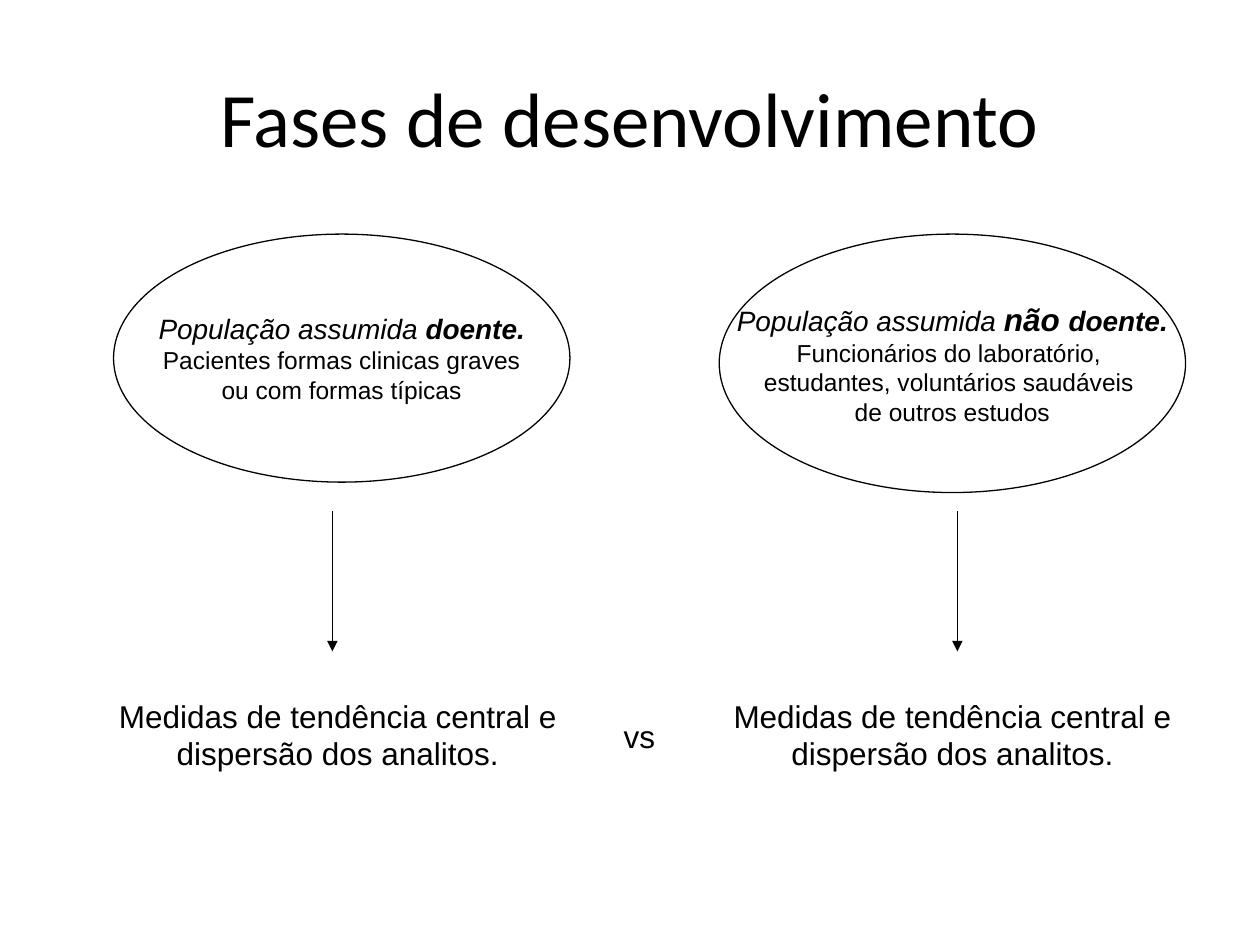
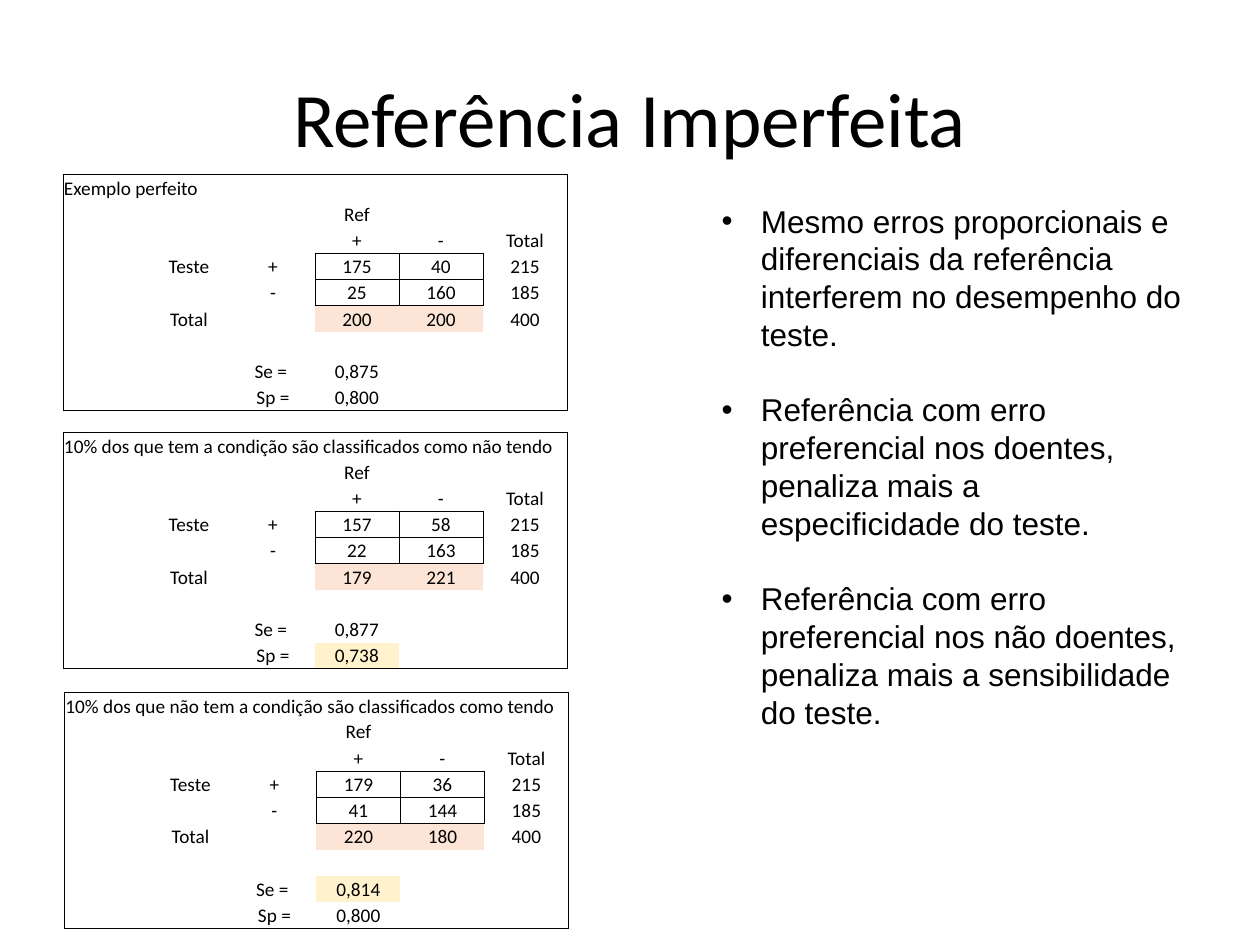
from lxml import etree
from pptx import Presentation
from pptx.dml.color import RGBColor
from pptx.enum.shapes import MSO_CONNECTOR, MSO_SHAPE
from pptx.enum.text import MSO_ANCHOR, PP_ALIGN
from pptx.oxml.ns import qn
from pptx.util import Cm, Pt

LEFT, CENTER = PP_ALIGN.LEFT, PP_ALIGN.CENTER
TOP, MIDDLE, BOTTOM = MSO_ANCHOR.TOP, MSO_ANCHOR.MIDDLE, MSO_ANCHOR.BOTTOM
OVAL, STRAIGHT = MSO_SHAPE.OVAL, MSO_CONNECTOR.STRAIGHT

BLACK, WHITE = "000000", "FFFFFF"
TOTAL_FILL, CHANGED_FILL = "FCE4D6", "FFF2CC"
TITLE_FONT, BODY_FONT = "Calibri", "Arial"

COLS, ROWS = 6, 9
TABLE_W, TABLE_H = 10.16, 4.77
SIDES = {"lnL": (0, -1), "lnR": (0, 1), "lnT": (-1, 0), "lnB": (1, 0)}


def color(value):
    return RGBColor.from_string(value)


def add_run(p, text, size=18, font=BODY_FONT, bold=False, italic=False):
    r = p.add_run()
    r.text = text
    r.font.size, r.font.name = Pt(size), font
    r.font.bold, r.font.italic = bold, italic
    r.font.color.rgb = color(BLACK)


def add_textbox(s, box, text, align=CENTER, anchor=TOP, **fmt):
    tf = s.shapes.add_textbox(*(Cm(v) for v in box)).text_frame
    tf.word_wrap = True
    tf.vertical_anchor = anchor
    tf.paragraphs[0].alignment = align
    add_run(tf.paragraphs[0], text, **fmt)


def add_slide(prs, title):
    s = prs.slides.add_slide(prs.slide_layouts[6])
    s.background.fill.solid()
    s.background.fill.fore_color.rgb = color(WHITE)
    add_textbox(s, (1.27, 0.76, 22.86, 3.18), title, anchor=MIDDLE,
                size=44, font=TITLE_FONT)
    return s


# Slide 1: populations and their measures
def add_population(s, box, assumed, members):
    sp = s.shapes.add_shape(OVAL, *(Cm(v) for v in box))
    sp.shadow.inherit = False
    sp.fill.background()
    sp.line.color.rgb = color(BLACK)
    sp.line.width = Pt(0.75)
    tf = sp.text_frame
    tf.word_wrap = False
    tf.vertical_anchor = MIDDLE
    p = tf.paragraphs[0]
    p.alignment = CENTER
    add_run(p, "População assumida ", size=16, italic=True)
    for text, size in assumed:
        add_run(p, text, size=size, bold=True, italic=True)
    for line in members:
        p = tf.add_paragraph()
        p.alignment = CENTER
        add_run(p, line, size=14)


def add_down_arrow(s, x, top, length):
    cx = s.shapes.add_connector(STRAIGHT, Cm(x), Cm(top), Cm(x), Cm(top + length))
    cx.line.color.rgb = color(BLACK)
    cx.line.width = Pt(0.75)
    etree.SubElement(cx.line._get_or_add_ln(), qn("a:tailEnd"), type="triangle")
    etree.SubElement(cx._element.spPr, qn("a:effectLst"))


def build_phases(prs):
    s = add_slide(prs, "Fases de desenvolvimento")
    add_population(s, (2.29, 4.72, 9.2, 5.0), [("doente.", 16)],
                   ["Pacientes formas clinicas graves", "ou com formas típicas"])
    add_population(s, (14.5, 4.72, 9.4, 5.21), [("não ", 18), ("doente.", 16)],
                   ["Funcionários do laboratório, ",
                    "estudantes, voluntários saudáveis ", "de outros estudos"])
    for arrow_x, text_x in ((6.7, 2.11), (19.3, 14.5)):
        add_down_arrow(s, arrow_x, 10.31, 2.82)
        add_textbox(s, (text_x, 13.92, 9.4, 1.78),
                    "Medidas de tendência central e dispersão dos analitos.")
    add_textbox(s, (12.09, 14.33, 1.6, 1.02), "vs")


# Slide 2: contingency tables and comments
def in_grid(row, col):
    return row in (3, 4) and col in (3, 4)


def set_borders(cell, row, col, span):
    """Line the outer frame and the four counts; hide every other edge."""
    tc_pr = cell._tc.get_or_add_tcPr()
    for tag, (dr, dc) in SIDES.items():
        r2, c2 = row + dr, col + (span if dc > 0 else dc)
        outside = not (0 <= r2 < ROWS and 0 <= c2 < COLS)
        ln = etree.SubElement(tc_pr, qn("a:" + tag), w=str(Pt(0.5)))
        if outside or in_grid(row, col) or in_grid(r2, c2):
            fill = etree.SubElement(ln, qn("a:solidFill"))
            etree.SubElement(fill, qn("a:srgbClr"), val=BLACK)
        else:
            etree.SubElement(ln, qn("a:noFill"))


def fill_cell(cell, text, fill, align, anchor):
    cell.margin_left = cell.margin_right = cell.margin_top = Cm(0.02)
    cell.margin_bottom = 0
    cell.vertical_anchor = anchor
    p = cell.text_frame.paragraphs[0]
    p.alignment = align
    if text:
        add_run(p, text, size=11, font=TITLE_FONT)
    else:
        etree.SubElement(p._p, qn("a:endParaRPr"), sz="1100")
    if fill:
        cell.fill.solid()
        cell.fill.fore_color.rgb = color(fill)
    else:
        cell.fill.background()


def add_contingency(s, left, top, title, span, counts, se, sp, changed=None):
    (a, b), (c, d) = counts
    texts = {
        (0, 0): title, (1, 3): "Ref",
        (2, 3): "+", (2, 4): "-", (2, 5): "Total",
        (3, 1): "Teste", (3, 2): "+", (3, 3): a, (3, 4): b, (3, 5): a + b,
        (4, 2): "-", (4, 3): c, (4, 4): d, (4, 5): c + d,
        (5, 1): "Total", (5, 3): a + c, (5, 4): b + d, (5, 5): a + b + c + d,
        (7, 2): "Se = ", (7, 3): se, (8, 2): "Sp =", (8, 3): sp,
    }
    fills = {(5, 3): TOTAL_FILL, (5, 4): TOTAL_FILL, changed: CHANGED_FILL}
    table = s.shapes.add_table(ROWS, COLS, Cm(left), Cm(top),
                               Cm(TABLE_W), Cm(TABLE_H)).table
    table.first_row = table.horz_banding = False
    for row in table.rows:
        row.height = Cm(TABLE_H / ROWS)
    table.cell(0, 0).merge(table.cell(0, span - 1))
    for row in range(ROWS):
        for col in range(COLS):
            cell, key = table.cell(row, col), (row, col)
            heading = key == (0, 0)
            set_borders(cell, row, col, span if heading else 1)
            fill_cell(cell, str(texts.get(key, "")), fills.get(key),
                      LEFT if heading else CENTER, BOTTOM if heading else MIDDLE)


def add_bullets(s, box, items):
    tf = s.shapes.add_textbox(*(Cm(v) for v in box)).text_frame
    tf.word_wrap = True
    for i, text in enumerate(items):
        p = tf.add_paragraph() if i else tf.paragraphs[0]
        p_pr = p._p.get_or_add_pPr()
        p_pr.set("marL", str(Cm(0.79)))
        p_pr.set("indent", str(-Cm(0.79)))
        etree.SubElement(p_pr, qn("a:buFont"), typeface=BODY_FONT)
        etree.SubElement(p_pr, qn("a:buChar"), char="•")
        if i:
            p.space_before = Pt(21.5)
        add_run(p, text)


def build_imperfect_reference(prs):
    s = add_slide(prs, "Referência Imperfeita")
    add_contingency(s, 1.27, 3.52, "Exemplo perfeito", 2,
                    ((175, 40), (25, 160)), "0,875", "0,800")
    add_contingency(s, 1.27, 8.72,
                    "10% dos que tem a condição são classificados como não tendo", 6,
                    ((157, 58), (22, 163)), "0,877", "0,738", changed=(8, 3))
    add_contingency(s, 1.3, 13.96,
                    "10% dos que não tem a condição são classificados como tendo", 6,
                    ((179, 36), (41, 144)), "0,814", "0,800", changed=(7, 3))
    add_bullets(s, (14.3, 3.94, 9.83, 11.02), [
        "Mesmo erros proporcionais e diferenciais da referência interferem "
        "no desempenho do teste.",
        "Referência com erro preferencial nos doentes, penaliza mais a "
        "especificidade do teste.",
        "Referência com erro preferencial nos não doentes, penaliza mais a "
        "sensibilidade do teste.",
    ])


def main():
    prs = Presentation()
    prs.slide_width, prs.slide_height = Cm(25.4), Cm(19.05)
    build_phases(prs)
    build_imperfect_reference(prs)
    prs.save("out.pptx")


if __name__ == "__main__":
    main()
